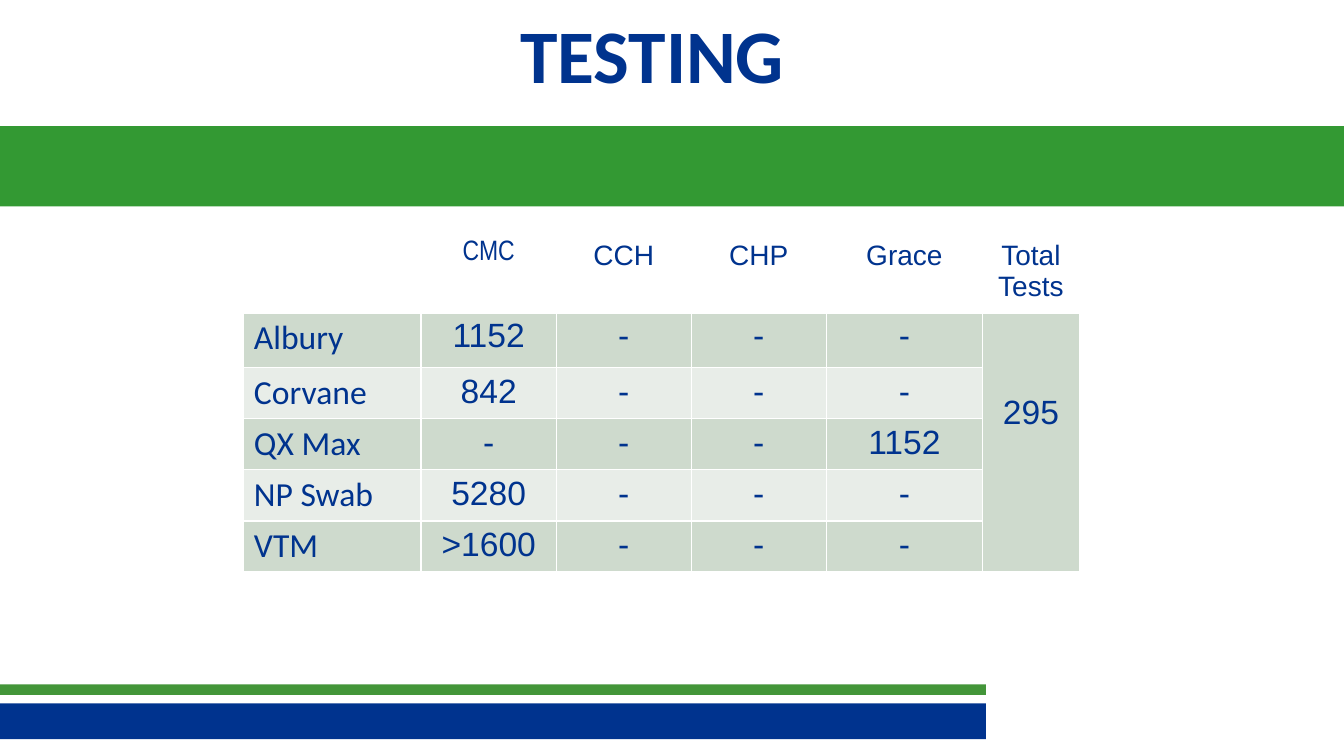
"""Build the TESTING slide with its table of test supplies per site."""
from dataclasses import dataclass

from lxml import etree
from pptx import Presentation
from pptx.enum.shapes import MSO_SHAPE
from pptx.enum.text import MSO_ANCHOR, PP_ALIGN
from pptx.oxml.ns import qn
from pptx.dml.color import RGBColor
from pptx.util import Pt

RECTANGLE = MSO_SHAPE.RECTANGLE
TOP = MSO_ANCHOR.TOP
LEFT, CENTER = PP_ALIGN.LEFT, PP_ALIGN.CENTER

COLORS = {
    "navy": "00338E",
    "footer_green": "439539",
    "band_green": "339933",
    "white": "FFFFFF",
    "row_dark": "CEDACD",
    "row_light": "E8EDE8",
}


@dataclass
class Bar:
    left: float
    top: float
    width: float
    height: float
    color: str


@dataclass
class TextStyle:
    font: str
    size: float
    align: int = CENTER
    bold: bool = False


FOOTER_BARS = [
    Bar(-2.16, 502.5, 706.3, 25.5, "navy"),
    Bar(-2.16, 488.9, 706.3, 7.4, "footer_green"),
]
HEADER_BAND = Bar(0, 90, 960, 57.4, "band_green")

TITLE = TextStyle("Calibri", 54, bold=True)
NARROW_HEADING = TextStyle("Arial Narrow", 20)
HEADING = TextStyle("Arial", 20)
LABEL = TextStyle("Calibri", 24, LEFT)
VALUE = TextStyle("Arial", 24)

ROWS = [
    ["", "CMC", "CCH", "CHP", "Grace", "Total Tests"],
    ["Albury", "1152", "-", "-", "-", "295"],
    ["Corvane", "842", "-", "-", "-", ""],
    ["QX Max", "-", "-", "-", "1152", ""],
    ["NP Swab", "5280", "-", "-", "-", ""],
    ["VTM", ">1600", "-", "-", "-", ""],
]
COLUMN_WIDTHS = [126.6, 96.6, 96.4, 96.4, 111.8, 69]
ROW_HEIGHTS = [52.2, 39.6] + [36.5] * 4
TOTAL_COLUMN = 5
TOTAL_TOP_MARGIN = 58.8


def rgb(name: str) -> RGBColor:
    return RGBColor.from_string(COLORS[name])


def add_bar(page, bar: Bar) -> None:
    box = page.shapes.add_shape(
        RECTANGLE, Pt(bar.left), Pt(bar.top), Pt(bar.width), Pt(bar.height))
    box.shadow.inherit = False
    box.fill.solid()
    box.fill.fore_color.rgb = rgb(bar.color)
    box.line.fill.background()


def write_text(text_frame, text: str, style: TextStyle) -> None:
    text_frame.text = text
    para = text_frame.paragraphs[0]
    para.alignment = style.align
    for span in para.runs:
        span.font.name = style.font
        span.font.size = Pt(style.size)
        span.font.bold = style.bold
        span.font.color.rgb = rgb("navy")


def add_title(page) -> None:
    box = page.shapes.add_textbox(Pt(80.6), Pt(0), Pt(770.4), Pt(118.8))
    box.text_frame.word_wrap = True
    box.text_frame.vertical_anchor = TOP
    box.text_frame.margin_top = Pt(5.7)
    write_text(box.text_frame, "TESTING", TITLE)


def add_borders(cell, bottom_width: float) -> None:
    properties = cell._tc.get_or_add_tcPr()
    widths = {"lnL": 1, "lnR": 1, "lnT": 1, "lnB": bottom_width}
    for side, width in widths.items():
        line = etree.SubElement(properties, qn(f"a:{side}"), w=str(Pt(width)))
        fill = etree.SubElement(line, qn("a:solidFill"))
        etree.SubElement(fill, qn("a:srgbClr"), val=COLORS["white"])


def cell_style(row: int, column: int) -> TextStyle:
    if row == 0:
        return NARROW_HEADING if column == 1 else HEADING
    return LABEL if column == 0 else VALUE


def row_color(row: int) -> str:
    if row == 0:
        return "white"
    return "row_dark" if row % 2 else "row_light"


def add_testing_table(page) -> None:
    table = page.shapes.add_table(
        len(ROWS), len(COLUMN_WIDTHS), Pt(174.2), Pt(167.8),
        Pt(sum(COLUMN_WIDTHS)), Pt(sum(ROW_HEIGHTS))).table
    table.first_row = False
    table.horz_banding = False
    for column, width in zip(table.columns, COLUMN_WIDTHS):
        column.width = Pt(width)
    for row, height in zip(table.rows, ROW_HEIGHTS):
        row.height = Pt(height)
    for row, texts in enumerate(ROWS):
        for column, text in enumerate(texts):
            cell = table.cell(row, column)
            write_text(cell.text_frame, text, cell_style(row, column))
            add_borders(cell, 1 if row else 3)
            cell.fill.solid()
            cell.fill.fore_color.rgb = rgb(row_color(row))
    total = table.cell(1, TOTAL_COLUMN)
    total.merge(table.cell(len(ROWS) - 1, TOTAL_COLUMN))
    total.margin_top = Pt(TOTAL_TOP_MARGIN)


def main() -> None:
    deck = Presentation()
    deck.slide_width, deck.slide_height = Pt(960), Pt(540)
    page = deck.slides.add_slide(deck.slide_layouts[6])
    for bar in FOOTER_BARS:
        add_bar(page, bar)
    add_title(page)
    add_bar(page, HEADER_BAND)
    add_testing_table(page)
    deck.save("out.pptx")


if __name__ == "__main__":
    main()
